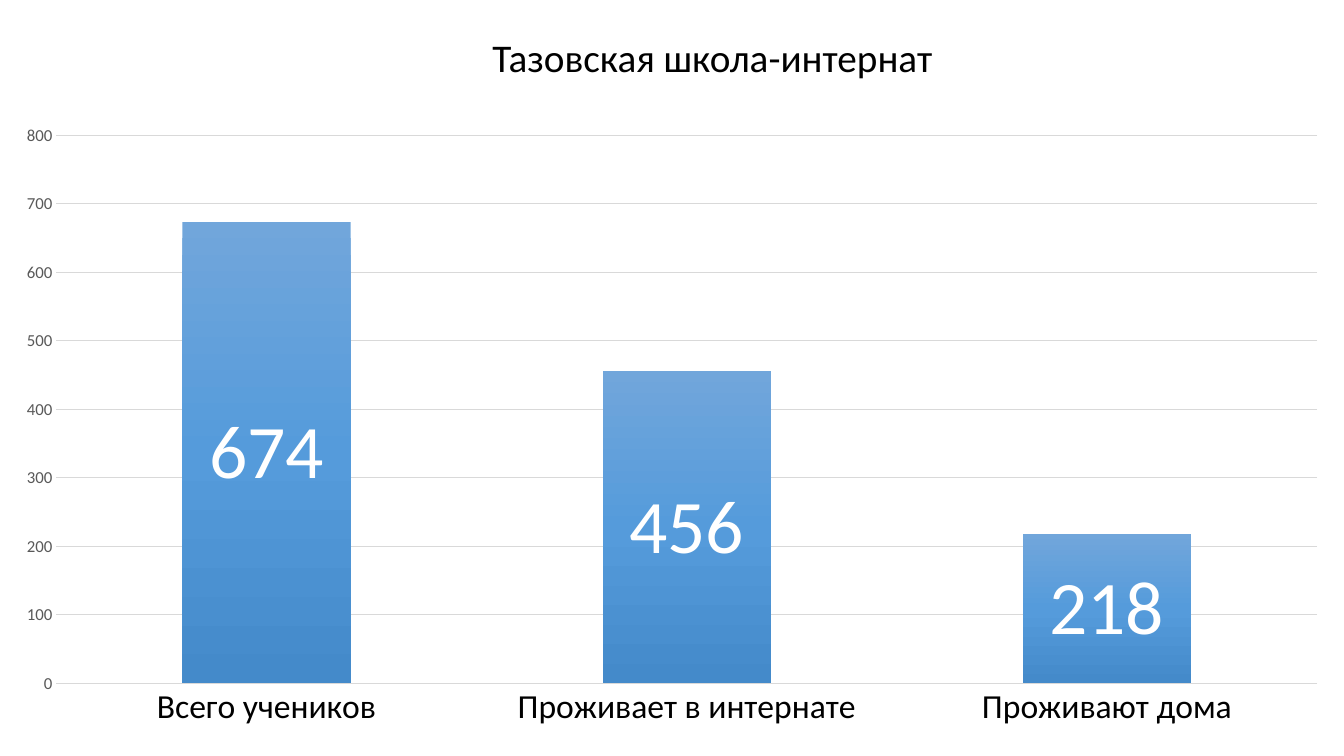
import lxml.etree
import pptx
import pptx.chart.data
import pptx.dml.color
import pptx.enum.chart
import pptx.enum.text
import pptx.oxml.ns
import pptx.util

Inches = pptx.util.Inches
FONT = "Calibri"
COUNTS = {
    "Всего учеников": 674,
    "Проживает в интернате": 456,
    "Проживают дома": 218,
}
SHADES = [(0, "71A6DB"), (50, "559BDB"), (100, "448ACA")]


def paint(color, tone):
    color.rgb = pptx.dml.color.RGBColor.from_string(tone)


def style(font, size, tone):
    font.name = FONT
    font.size = pptx.util.Pt(size)
    font.bold = False
    paint(font.color, tone)


def shade(fill, stops):
    """Fill from top to bottom through (percent, hex) stops."""
    fill.gradient()
    fill.gradient_angle = 270
    qn = pptx.oxml.ns.qn
    # python-pptx cannot add gradient stops, so the list is rebuilt
    parent = fill.gradient_stops[0]._gs.getparent()
    for old in list(parent):
        parent.remove(old)
    for place, tone in stops:
        stop = lxml.etree.SubElement(parent, qn("a:gs"), pos=str(place * 1000))
        lxml.etree.SubElement(stop, qn("a:srgbClr"), val=tone)


def add_title(slide, left, top, width, height):
    title = slide.shapes.title
    title.left, title.top = Inches(left), Inches(top)
    title.width, title.height = Inches(width), Inches(height)
    frame = title.text_frame
    frame.text = "Тазовская школа-интернат"
    frame.word_wrap = True
    frame.vertical_anchor = pptx.enum.text.MSO_ANCHOR.TOP
    line = frame.paragraphs[0]
    line.alignment = pptx.enum.text.PP_ALIGN.CENTER
    line.line_spacing = 0.9
    style(line.runs[0].font, 28, "000000")


def format_axes(chart):
    none = pptx.enum.chart.XL_TICK_MARK.NONE
    names, scale = chart.category_axis, chart.value_axis
    for axis, size, tone in ((names, 24, "000000"), (scale, 12, "595959")):
        axis.major_tick_mark = axis.minor_tick_mark = none
        style(axis.tick_labels.font, size, tone)
    scale.minimum_scale, scale.maximum_scale = 0, 800
    scale.major_unit = 100
    scale.format.line.fill.background()
    for line, width in ((names.format.line, 1),
                        (scale.major_gridlines.format.line, 0.75)):
        paint(line.color, "D9D9D9")
        line.width = pptx.util.Pt(width)


def add_bars(slide, left, top, width, height):
    data = pptx.chart.data.CategoryChartData()
    data.categories = list(COUNTS)
    data.add_series("Series 1", list(COUNTS.values()))
    frame = slide.shapes.add_chart(
        pptx.enum.chart.XL_CHART_TYPE.COLUMN_STACKED,
        Inches(left), Inches(top), Inches(width), Inches(height), data)
    chart = frame.chart
    chart.has_title = chart.has_legend = False
    style(chart.font, 10, "000000")
    format_axes(chart)

    plot = chart.plots[0]
    plot.gap_width, plot.overlap = 150, 100
    plot.vary_by_categories = False
    bars = plot.series[0]
    shade(bars.format.fill, SHADES)
    labels = bars.data_labels
    labels.show_value = True
    labels.position = pptx.enum.chart.XL_LABEL_POSITION.CENTER
    style(labels.font, 54, "FFFFFF")


def main():
    deck = pptx.Presentation()
    deck.slide_width, deck.slide_height = Inches(13.33), Inches(7.5)
    slide = deck.slides.add_slide(deck.slide_layouts.get_by_name("Title Only"))
    fill = slide.background.fill
    fill.solid()
    paint(fill.fore_color, "FFFFFF")
    add_bars(slide, 0, 1.12, 13.33, 6.23)
    add_title(slide, 2, 0.33, 10.13, 0.75)
    deck.save("out.pptx")


if __name__ == "__main__":
    main()
